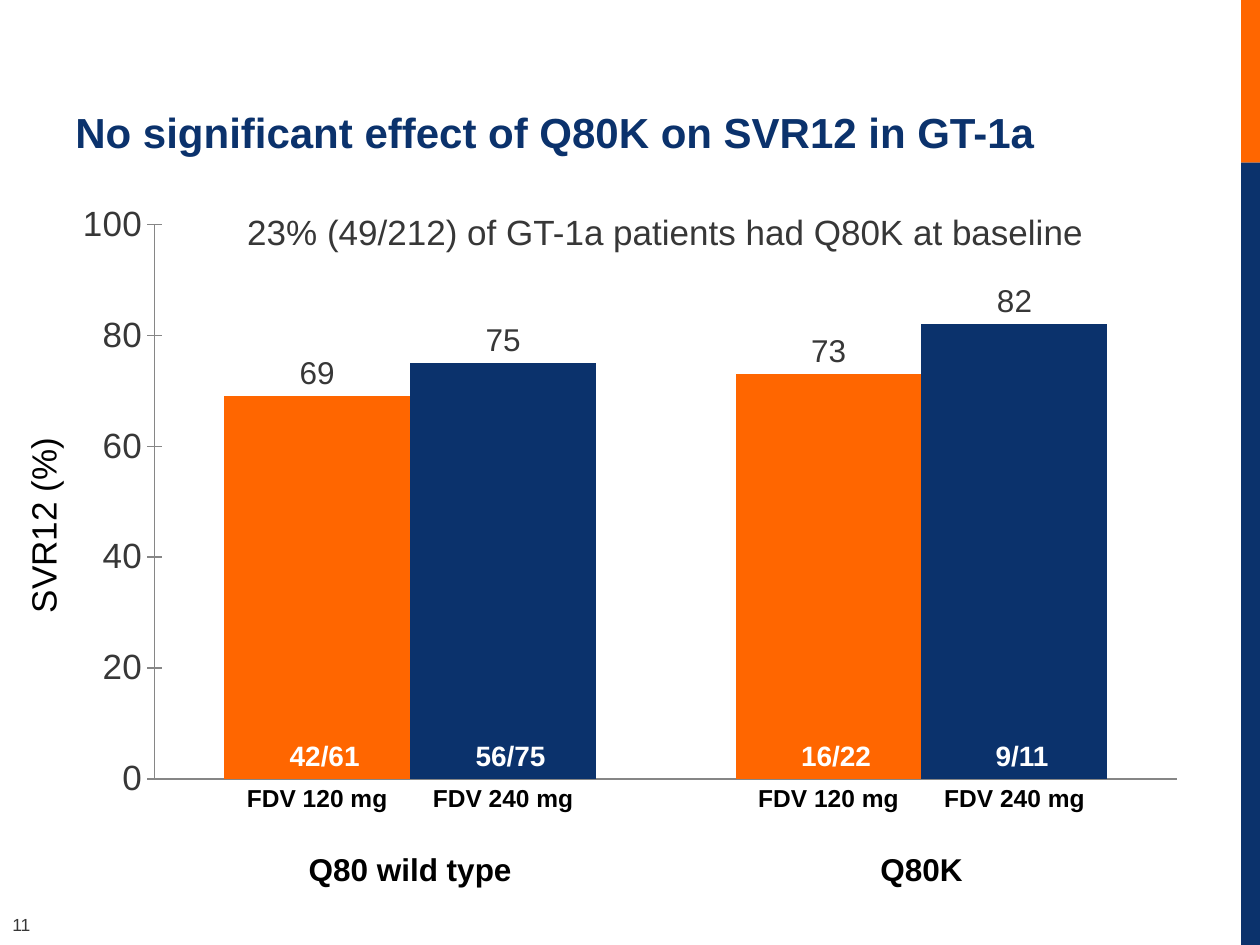
from dataclasses import dataclass

from lxml import etree
from pptx import Presentation
from pptx.chart.data import CategoryChartData
from pptx.dml.color import RGBColor
from pptx.enum.chart import XL_CHART_TYPE, XL_LABEL_POSITION, XL_TICK_LABEL_POSITION, XL_TICK_MARK
from pptx.enum.shapes import MSO_SHAPE
from pptx.enum.text import MSO_ANCHOR, MSO_AUTO_SIZE, PP_ALIGN
from pptx.oxml.ns import qn
from pptx.util import Cm, Pt

COLUMN_CLUSTERED = XL_CHART_TYPE.COLUMN_CLUSTERED
OUTSIDE_END = XL_LABEL_POSITION.OUTSIDE_END
NO_LABELS = XL_TICK_LABEL_POSITION.NONE
NO_TICKS, CROSS_TICKS = XL_TICK_MARK.NONE, XL_TICK_MARK.CROSS
RECTANGLE = MSO_SHAPE.RECTANGLE
TOP, BOTTOM = MSO_ANCHOR.TOP, MSO_ANCHOR.BOTTOM
GROW, FIXED = MSO_AUTO_SIZE.SHAPE_TO_FIT_TEXT, MSO_AUTO_SIZE.NONE
LEFT, CENTER = PP_ALIGN.LEFT, PP_ALIGN.CENTER


@dataclass(frozen=True)
class Theme:
    """Colours, font and type sizes of the slide."""

    orange: RGBColor = RGBColor(0xFF, 0x66, 0x00)
    navy: RGBColor = RGBColor(0x0B, 0x32, 0x6C)
    grey: RGBColor = RGBColor(0x37, 0x37, 0x37)
    axis: RGBColor = RGBColor(0x86, 0x86, 0x86)
    black: RGBColor = RGBColor(0, 0, 0)
    white: RGBColor = RGBColor(0xFF, 0xFF, 0xFF)
    font: str = "Arial"
    title: int = 24
    body: int = 20
    group: int = 18
    fraction: int = 16
    dose: int = 14
    number: int = 10


@dataclass(frozen=True)
class Box:
    """A rectangle on the slide, in centimetres."""

    left: float
    top: float
    width: float
    height: float

    def lengths(self):
        """Return the four measures as slide lengths."""
        return [Cm(value) for value in (self.left, self.top, self.width, self.height)]


THEME = Theme()
SLIDE_WIDTH, SLIDE_HEIGHT = 25.4, 19.05
PLOT = {"x": 0.09, "y": 0.05, "w": 0.9, "h": 0.84}
PLOT.update(x=0.088, y=0.048, w=0.896, h=0.845)
GAP_WIDTH = 75
GROUPS = ["Q80 wild type", "Q80K"]
DOSES = [
    ("FDV 120 mg", THEME.orange, [69, 73], ["42/61", "16/22"]),
    ("FDV 240 mg", THEME.navy, [75, 82], ["56/75", "9/11"]),
]


def style_font(font, size, color, bold=False):
    """Set typeface, size, colour and weight."""
    font.name, font.size, font.bold = THEME.font, Pt(size), bold
    font.color.rgb = color


def add_text(slide, box, text, size, color, bold=False, align=CENTER, anchor=TOP, wrap=True, fit=GROW):
    """Add a one-paragraph text box and return it."""
    shape = slide.shapes.add_textbox(*box.lengths())
    frame = shape.text_frame
    frame.word_wrap, frame.auto_size, frame.vertical_anchor = wrap, fit, anchor
    paragraph = frame.paragraphs[0]
    paragraph.text, paragraph.alignment = text, align
    style_font(paragraph.font, size, color, bold)
    return shape


def add_side_band(slide, box, split):
    """Fill the band with orange above the split and navy below."""
    parts = [(0, split, THEME.orange), (split, box.height - split, THEME.navy)]
    for offset, height, color in parts:
        part = Box(box.left, box.top + offset, box.width, height)
        shape = slide.shapes.add_shape(RECTANGLE, *part.lengths())
        shape.shadow.inherit = False
        shape.fill.solid()
        shape.fill.fore_color.rgb = color
        shape.line.fill.background()


def set_plot_layout(chart):
    """Fix the inner plot area at its share of the chart."""
    plot_area = chart.element.find(f".//{qn('c:plotArea')}")
    for layout in plot_area.findall(qn("c:layout")):
        plot_area.remove(layout)
    layout = etree.Element(qn("c:layout"))
    plot_area.insert(0, layout)
    manual = etree.SubElement(layout, qn("c:manualLayout"))
    values = {"layoutTarget": "inner", "xMode": "edge", "yMode": "edge", **PLOT}
    for name, value in values.items():
        etree.SubElement(manual, qn(f"c:{name}")).set("val", str(value))


def style_axes(chart):
    """Scale the value axis and leave the category axis bare."""
    for axis in (chart.category_axis, chart.value_axis):
        axis.has_major_gridlines = False
        axis.minor_tick_mark = NO_TICKS
        axis.format.line.color.rgb = THEME.axis
        style_font(axis.tick_labels.font, THEME.body, THEME.grey)
    chart.category_axis.major_tick_mark = NO_TICKS
    chart.category_axis.tick_label_position = NO_LABELS
    value_axis = chart.value_axis
    value_axis.major_tick_mark = CROSS_TICKS
    value_axis.minimum_scale, value_axis.maximum_scale = 0, 100
    value_axis.major_unit = 20


def add_response_chart(slide, box):
    """Add the clustered columns with a value above each."""
    data = CategoryChartData()
    data.categories = ["1", "2"]
    for number, (_, _, values, _) in enumerate(DOSES, 1):
        data.add_series(f"Series {number}", values)
    chart = slide.shapes.add_chart(COLUMN_CLUSTERED, *box.lengths(), data).chart
    chart.has_legend = chart.has_title = False
    style_font(chart.font, THEME.group, THEME.grey)
    set_plot_layout(chart)
    style_axes(chart)
    plot = chart.plots[0]
    plot.gap_width, plot.overlap, plot.vary_by_categories = GAP_WIDTH, 0, False
    for series, (_, color, _, _) in zip(plot.series, DOSES):
        series.format.fill.solid()
        series.format.fill.fore_color.rgb = color
        labels = series.data_labels
        labels.show_value, labels.position = True, OUTSIDE_END
        style_font(labels.font, THEME.group, THEME.grey)


def add_column_captions(slide, box):
    """Place doses, patient counts and group names along the columns."""
    group_width = box.width * PLOT["w"] / len(GROUPS)
    column_width = group_width / (len(DOSES) + GAP_WIDTH / 100)

    def caption(center, offset, width, height, text, size, color):
        area = Box(center - width / 2, box.top + offset, width, height)
        add_text(slide, area, text, size, color, bold=True)

    for group, name in enumerate(GROUPS):
        middle = box.left + box.width * PLOT["x"] + group_width * (group + 0.5)
        for index, (dose, _, _, fractions) in enumerate(DOSES):
            center = middle + column_width * (index - (len(DOSES) - 1) / 2)
            caption(center + 0.15, 10.87, 2.79, 0.94, fractions[group], THEME.fraction, THEME.white)
            caption(center, 11.78, 3.65, 0.86, dose, THEME.dose, THEME.black)
        caption(middle, 13.13, 6.4, 1.02, name, THEME.group, THEME.black)


def add_chart_region(slide, box):
    """Add the chart with its statement, axis name and captions."""
    add_response_chart(slide, box)
    add_column_captions(slide, box)
    statement = Box(box.left + 2.42, box.top + 0.23, 19.81, 1.11)
    add_text(slide, statement, "23% (49/212) of GT-1a patients had Q80K at baseline", THEME.body, THEME.grey)
    axis_name = Box(box.left - 2.41, box.top + 6.15, 4.37, 1.11)
    add_text(slide, axis_name, "SVR12 (%)", THEME.body, THEME.black).rotation = 270


def main():
    """Build the slide and save it."""
    presentation = Presentation()
    presentation.slide_width, presentation.slide_height = Cm(SLIDE_WIDTH), Cm(SLIDE_HEIGHT)
    slide = presentation.slides.add_slide(presentation.slide_layouts[6])
    add_side_band(slide, Box(25.02, 0, 0.4, SLIDE_HEIGHT), 3.28)
    add_text(slide, Box(0, 18.31, 0.94, 0.69), "11", THEME.number, THEME.grey, align=LEFT, wrap=False)
    add_chart_region(slide, Box(1.09, 3.89, 23.01, 13.23))
    add_text(
        slide, Box(1.27, 0.46, 22.86, 2.82), "No significant effect of Q80K on SVR12 in GT-1a",
        THEME.title, THEME.navy, bold=True, align=LEFT, anchor=BOTTOM, fit=FIXED,
    )
    presentation.save("out.pptx")


if __name__ == "__main__":
    main()
